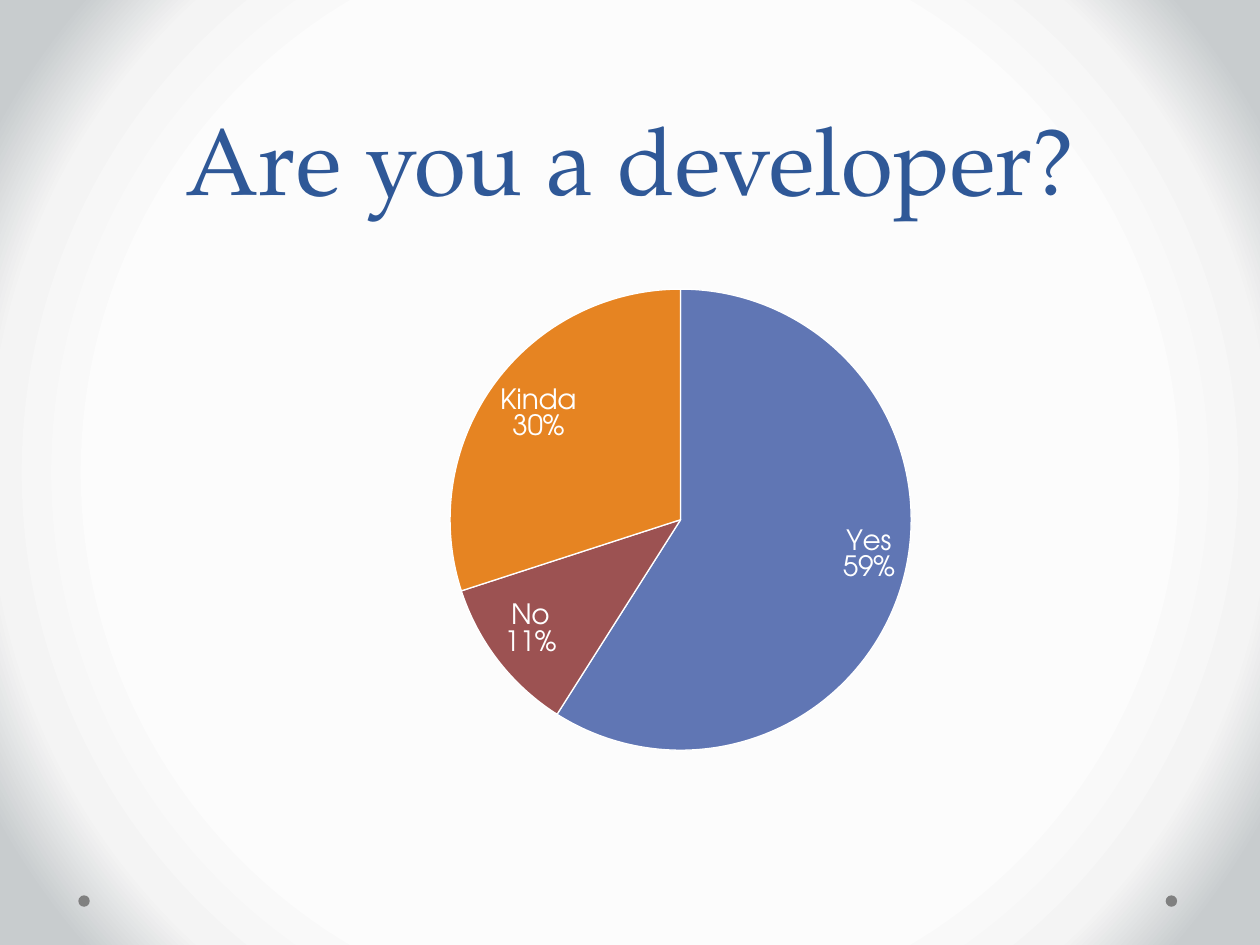
from lxml import etree
from pptx import Presentation
from pptx import util as u
from pptx.chart.data import CategoryChartData
from pptx.dml.color import RGBColor
from pptx.enum import chart as charts, shapes, text
from pptx.oxml import parse_xml
from pptx.oxml.ns import nsdecls, qn


def color(hex_string):
    return RGBColor.from_string(hex_string)


class SlideBuilder:
    title_font = "TeX Gyre Pagella"
    label_font = "TeX Gyre Adventor"
    title_color = "2F5897"
    dot_color = "808080"
    white = "FFFFFF"

    def __init__(self, presentation):
        self.slide = presentation.slides.add_slide(presentation.slide_layouts[5])

    def background(self, stops):
        """Circular gradient; stops are (percent, colour) from the centre out."""
        fill = self.slide.background.fill
        fill.background()
        stop_xml = "".join(
            f'<a:gs pos="{percent * 1000}"><a:srgbClr val="{value}"/></a:gs>'
            for percent, value in stops)
        gradient = parse_xml(
            f'<a:gradFill {nsdecls("a")} rotWithShape="1"><a:gsLst>{stop_xml}</a:gsLst>'
            '<a:path path="circle"><a:fillToRect l="50000" t="50000" r="50000" b="50000"/>'
            '</a:path></a:gradFill>')
        properties = self.slide.element.cSld.find(qn("p:bg")).find(qn("p:bgPr"))
        properties.replace(properties.find(qn("a:noFill")), gradient)

    def dot(self, left, top, size):
        shape = self.slide.shapes.add_shape(
            shapes.MSO_SHAPE.OVAL, u.Cm(left), u.Cm(top), u.Cm(size), u.Cm(size))
        shape.shadow.inherit = False
        shape.fill.solid()
        shape.fill.fore_color.rgb = color(self.dot_color)
        shape.line.fill.background()

    def title(self, wording, left, top, width, height):
        shape = self.slide.shapes.title
        shape.left, shape.top = u.Cm(left), u.Cm(top)
        shape.width, shape.height = u.Cm(width), u.Cm(height)
        frame = shape.text_frame
        frame.text = wording
        frame.vertical_anchor = text.MSO_ANCHOR.BOTTOM
        paragraph = frame.paragraphs[0]
        paragraph.alignment = text.PP_ALIGN.CENTER
        paragraph.line_spacing = u.Pt(58)
        paragraph.font.size = u.Pt(54)
        paragraph.font.name = self.title_font
        paragraph.font.color.rgb = color(self.title_color)

    def pie(self, slices, left, top, width, height, plot_area):
        """Slices are (category, value, colour); plot_area holds chart fractions."""
        data = CategoryChartData()
        data.categories = [category for category, _, _ in slices]
        data.add_series("Series 1", [value for _, value, _ in slices])
        chart = self.slide.shapes.add_chart(
            charts.XL_CHART_TYPE.PIE, u.Cm(left), u.Cm(top),
            u.Cm(width), u.Cm(height), data).chart
        chart.has_legend = False
        chart.has_title = False
        chart.font.size = u.Pt(18)
        chart.font.name = self.title_font
        chart.font.color.rgb = color("000000")

        # Slices
        plot = chart.plots[0]
        plot.vary_by_categories = True
        for index, (_, _, value_color) in enumerate(slices):
            point = plot.series[0].points[index]
            point.format.fill.solid()
            point.format.fill.fore_color.rgb = color(value_color)
            point.format.line.color.rgb = color(self.white)
            point.format.line.width = u.Pt(0.75)

        # Labels: category above percentage
        plot.has_data_labels = True
        labels = plot.data_labels
        labels.show_category_name = True
        labels.show_percentage = True
        labels.show_value = False
        labels.number_format = "0%"
        labels.number_format_is_linked = False
        labels.position = charts.XL_LABEL_POSITION.INSIDE_END
        labels.font.size = u.Pt(16)
        labels.font.name = self.label_font
        labels.font.color.rgb = color(self.white)
        label_element = plot._element.find(qn("c:dLbls"))
        separator = etree.Element(qn("c:separator"))
        separator.text = "\n"
        label_element.find(qn("c:showBubbleSize")).addnext(separator)

        # Fixed plot area
        area = chart._chartSpace.chart.plotArea
        for old_layout in area.findall(qn("c:layout")):
            area.remove(old_layout)
        sizes = "".join(f'<c:{key} val="{value}"/>' for key, value in plot_area.items())
        area.insert(0, parse_xml(
            f'<c:layout {nsdecls("c")}><c:manualLayout><c:layoutTarget val="inner"/>'
            f'<c:xMode val="edge"/><c:yMode val="edge"/>{sizes}'
            '</c:manualLayout></c:layout>'))


def main():
    presentation = Presentation()
    presentation.slide_width, presentation.slide_height = u.Cm(25.4), u.Cm(19.05)
    builder = SlideBuilder(presentation)

    # Backdrop
    builder.background([(66, "FCFCFC"), (81, "F4F4F4"), (92, "C8CCCE")])
    for left in (23.5, 1.58):
        builder.dot(left, 18.05, 0.23)

    # Content
    builder.title("Are you a developer?", 1.27, 0, 22.86, 4.45)
    builder.pie(
        [("Yes", 59, "6076B4"), ("No", 11, "9C5252"), ("Kinda", 30, "E68422")],
        5.72, 5.5, 15.24, 10.37,
        {"x": 0.22, "y": 0.03, "w": 0.61, "h": 0.9})

    presentation.save("out.pptx")


if __name__ == "__main__":
    main()
